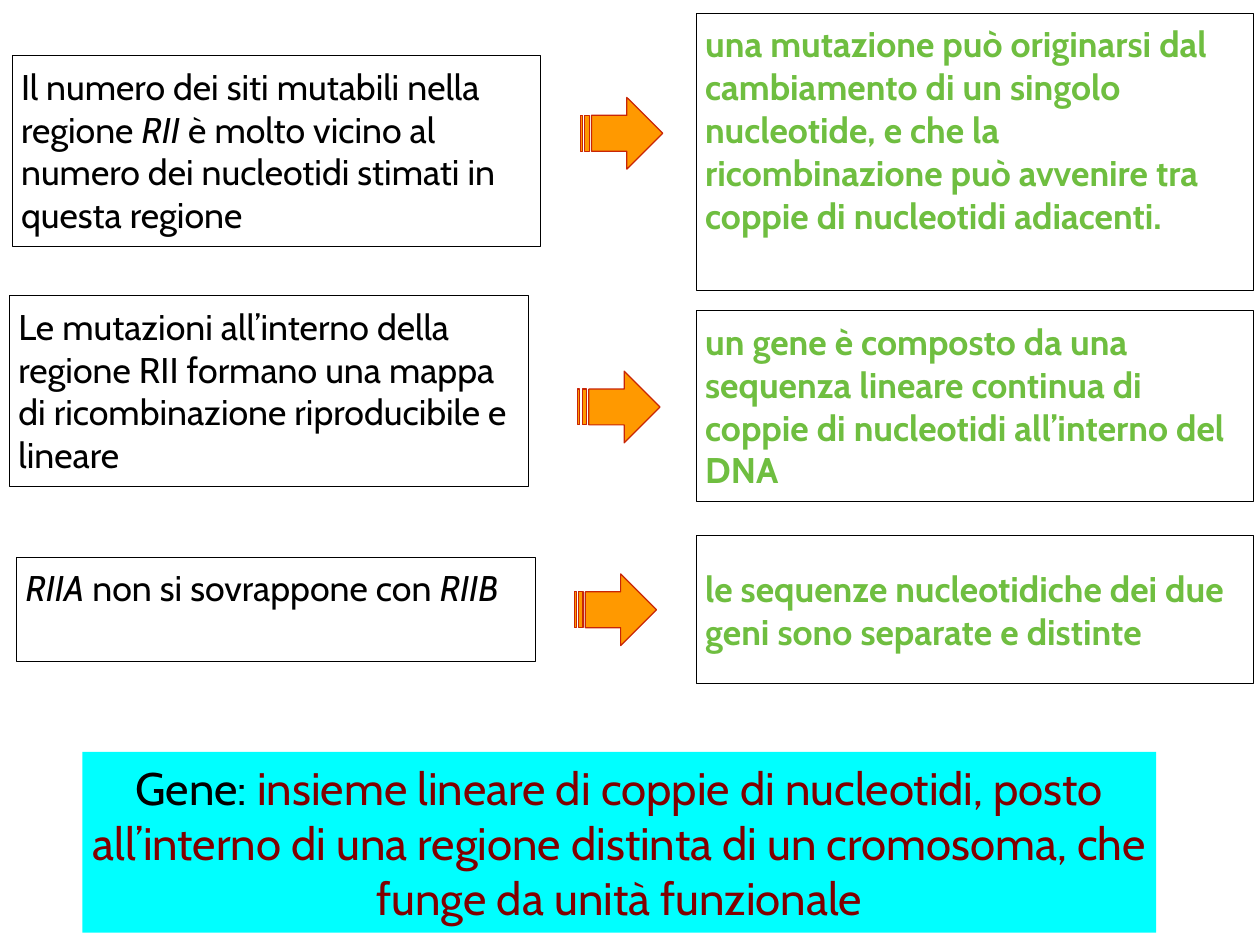
import pptx
import pptx.dml.color
import pptx.enum.shapes
import pptx.enum.text
import pptx.util
from lxml import etree

RGBColor = pptx.dml.color.RGBColor
BLACK = RGBColor(0x00, 0x00, 0x00)
GREEN = RGBColor(0x6F, 0xBE, 0x40)
ORANGE = RGBColor(0xFF, 0x99, 0x00)
RED = RGBColor(0xC8, 0x25, 0x06)
CYAN = RGBColor(0x00, 0xFF, 0xFF)
MAROON = RGBColor(0x80, 0x00, 0x00)

FONT = "Cabin"
TOP = pptx.enum.text.MSO_ANCHOR.TOP
MIDDLE = pptx.enum.text.MSO_ANCHOR.MIDDLE

# The slide is a grid of 100 columns by 100 rows
WIDTH = pptx.util.Inches(14.22)
HEIGHT = pptx.util.Inches(10.67)
COLUMN = WIDTH / 100
ROW = HEIGHT / 100

CONCLUSION_LEFT, CONCLUSION_WIDTH = 55.27, 44.23
ARROW_WIDTH, ARROW_HEIGHT = 6.54, 7.59

# Each row: observation place and spans (text, italic),
# arrow corner, conclusion top, height, anchor and text
ROWS = [
    ((0.98, 5.9, 41.91, 20.15),
     [("Il numero dei siti mutabili nella regione ", False), ("RII ", True),
      ("è molto vicino al numero dei nucleotidi stimati in questa regione", False)],
     (46.06, 10.31), 1.41, 29.33, TOP,
     "una mutazione può originarsi dal cambiamento di un singolo nucleotide, "
     "e che la ricombinazione può avvenire tra coppie di nucleotidi adiacenti."),
    ((0.77, 31.3, 41.14, 20.15),
     [("Le mutazioni all’interno della regione RII formano una mappa "
       "di ricombinazione riproducibile e lineare", False)],
     (45.85, 39.27), 32.9, 20.15, TOP,
     "un gene è composto da una sequenza lineare continua di coppie "
     "di nucleotidi all’interno del DNA"),
    ((1.34, 58.95, 41.14, 11.06),
     [("RIIA", True), (" non si sovrappone con ", False), ("RIIB", True)],
     (45.57, 60.73), 56.7, 15.65, MIDDLE,
     "le sequenze nucleotidiche dei due geni sono separate e distinte"),
]


def place(left, top, width, height):
    return (round(left * COLUMN), round(top * ROW),
            round(width * COLUMN), round(height * ROW))


def add_panel(page, area, size, inset, anchor):
    """Add an empty text panel; return it with its first paragraph."""
    box = page.shapes.add_textbox(*place(*area))
    frame = box.text_frame
    frame.word_wrap = True
    frame.vertical_anchor = anchor
    frame.margin_left = frame.margin_right = pptx.util.Inches(inset)
    frame.margin_top = frame.margin_bottom = pptx.util.Inches(inset)
    para = frame.paragraphs[0]
    para.font.name = FONT
    para.font.size = pptx.util.Pt(size)
    return box, para


def add_span(para, text):
    span = para.add_run()
    span.text = text
    return span


def set_line(shape, color, width):
    shape.line.color.rgb = color
    shape.line.width = pptx.util.Pt(width)


def add_framed_panel(page, area, spans, color, bold=False, anchor=TOP):
    box, para = add_panel(page, area, 29, 0.1, anchor)
    set_line(box, BLACK, 0.75)
    para.font.color.rgb = color
    para.font.bold = bold
    for text, italic in spans:
        span = add_span(para, text)
        if italic:
            span.font.italic = True


def add_arrow(page, left, top):
    arrow = page.shapes.add_shape(
        pptx.enum.shapes.MSO_SHAPE.STRIPED_RIGHT_ARROW,
        *place(left, top, ARROW_WIDTH, ARROW_HEIGHT))
    arrow.shadow.inherit = False
    arrow.fill.solid()
    arrow.fill.fore_color.rgb = ORANGE
    set_line(arrow, RED, 1)


def add_definition(page, area, term, meaning):
    box, para = add_panel(page, area, 37, 0.06, MIDDLE)
    box.fill.solid()
    box.fill.fore_color.rgb = CYAN
    para.alignment = pptx.enum.text.PP_ALIGN.CENTER
    add_span(para, term).font.color.rgb = BLACK
    add_span(para, meaning).font.color.rgb = MAROON


def main():
    deck = pptx.Presentation()
    deck.slide_width, deck.slide_height = WIDTH, HEIGHT
    page = deck.slides.add_slide(deck.slide_layouts[6])

    # Definition of the gene
    add_definition(
        page, (6.54, 79.57, 85.23, 19.12), "Gene: ",
        "insieme lineare di coppie di nucleotidi, posto all’interno di una "
        "regione distinta di un cromosoma, che funge da unità funzionale")

    # Observations leading to conclusions
    for area, spans, corner, top, height, anchor, conclusion in ROWS:
        add_framed_panel(page, area, spans, BLACK)
        add_arrow(page, *corner)
        add_framed_panel(page, (CONCLUSION_LEFT, top, CONCLUSION_WIDTH, height),
                         [(conclusion, False)], GREEN, bold=True, anchor=anchor)

    deck.save("out.pptx")


if __name__ == "__main__":
    main()
